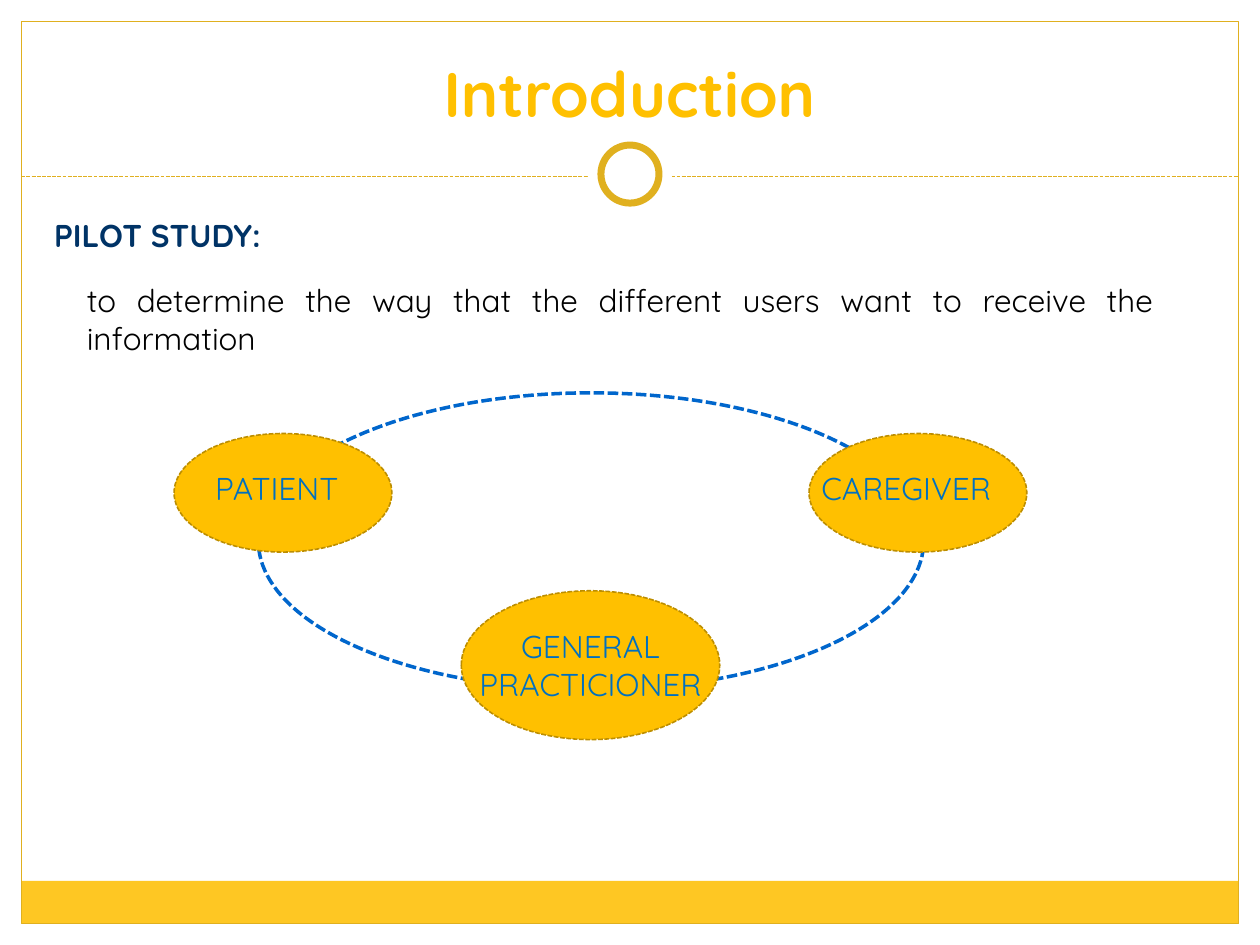
from lxml import etree
from pptx import Presentation
from pptx.dml.color import RGBColor
from pptx.enum.dml import MSO_LINE
from pptx.enum.shapes import MSO_CONNECTOR, MSO_SHAPE
from pptx.enum.text import MSO_ANCHOR, PP_ALIGN
from pptx.oxml.ns import qn
from pptx.util import Cm, Pt

OVAL, RECT = MSO_SHAPE.OVAL, MSO_SHAPE.RECTANGLE
LINE = MSO_CONNECTOR.STRAIGHT
DASH = MSO_LINE.SQUARE_DOT
LEFT, MID, JUST = PP_ALIGN.LEFT, PP_ALIGN.CENTER, PP_ALIGN.JUSTIFY
TOP, BASE = MSO_ANCHOR.TOP, MSO_ANCHOR.BOTTOM

WIDE, HIGH = 25.4, 19.05
GOLD, AMBER, WHITE = "E0B01F", "FFC000", "FFFFFF"


def tint(code):
    return RGBColor.from_string(code)


def stroke(line, code, size, dash=None):
    line.color.rgb = tint(code)
    line.width = Pt(size)
    if dash:
        line.dash_style = dash


def shape(slide, kind, box, fill=None, line=None):
    item = slide.shapes.add_shape(kind, *map(Cm, box))
    item.shadow.inherit = False
    if fill:
        item.fill.solid()
        item.fill.fore_color.rgb = tint(fill)
    else:
        item.fill.background()
    if line:
        stroke(item.line, *line)
    else:
        item.line.fill.background()
    return item


def write(frame, text, code, size=18, bold=False, align=LEFT, anchor=TOP):
    frame.word_wrap = True
    frame.vertical_anchor = anchor
    para = frame.paragraphs[0]
    para.alignment = align
    run = para.add_run()
    run.text = text
    form = {"name": "Quicksand", "size": Pt(size), "bold": bold}
    for key, value in form.items():
        setattr(run.font, key, value)
    run.font.color.rgb = tint(code)


def label(slide, box, text, code, **form):
    item = slide.shapes.add_textbox(*map(Cm, box))
    write(item.text_frame, text, code, **form)


def border(slide, box):
    left, top, wide, high = box
    mid = left + wide / 2
    # Footer band and frame
    shape(slide, RECT, (left, top + high - 0.86, wide, 0.86), "FEC723")
    shape(slide, RECT, box, line=(GOLD, 0.75))
    # Dashed rule under the title
    rule = top + 3.13
    ends = map(Cm, (left, rule, left + wide, rule))
    link = slide.shapes.add_connector(LINE, *ends)
    stroke(link.line, GOLD, 0.75, DASH)
    etree.SubElement(link._element.spPr, qn("a:effectLst"))
    # Ring on the rule, with a white gap around it
    for size, line in ((1.7, None), (1.17, (GOLD, 4))):
        spot = (mid - size / 2, rule - 0.05 - size / 2, size, size)
        shape(slide, OVAL, spot, WHITE, line)


def heading(slide, box):
    title = slide.shapes.title
    for key, value in zip(("left", "top", "width", "height"), box):
        setattr(title, key, Cm(value))
    write(title.text_frame, "Introduction", AMBER, size=36, bold=True,
          align=MID, anchor=BASE)


def study(slide, box):
    left, top, wide, high = box
    label(slide, (left, top, wide, 1.02), "PILOT STUDY:", "003366", bold=True)
    label(slide, (left + 0.66, top + 1.3, wide - 1.62, high - 1.3),
          "to determine the way that the different users want to receive "
          "the information", "000000", align=JUST)


def users(slide, box):
    left, top, wide, high = box
    # Loop that joins the users
    shape(slide, OVAL, (left + 1.7, top, 13.41, 5.99),
          line=("0066CC", 2, DASH))
    # Users: x, y, width, height, label inset, label height, name, alignment
    side, low = (4.39, 2.39), (5.21, 3)
    nodes = (
        (0, 0.82, *side, 0.58, 1.02, "PATIENT", LEFT),
        ((wide - low[0]) / 2 - 0.2, high - low[1], *low, 0, 1.8,
         "GENERAL PRACTICIONER", MID),
        (wide - side[0], 0.82, *side, 0, 1.02, "CAREGIVER", LEFT),
    )
    for x, y, w, h, inset, tall, name, align in nodes:
        x, y = left + x, top + y
        shape(slide, OVAL, (x, y, w, h), AMBER, ("BD8E00", 0.9, DASH))
        label(slide, (x + inset, y + 0.6, w - 2 * inset, tall),
              name, "0070C0", align=align)


def main():
    deck = Presentation()
    deck.slide_width, deck.slide_height = Cm(WIDE), Cm(HIGH)
    slide = deck.slides.add_slide(deck.slide_layouts[5])
    edge = 0.43
    border(slide, (edge, edge, WIDE - 2 * edge, HIGH - 2 * edge))
    heading(slide, (0.84, 0.64, 23.7, 2.11))
    study(slide, (0.84, 4.24, 23.62, 3.1))
    users(slide, (3.51, 7.92, 17.19, 6.99))
    deck.save("out.pptx")


if __name__ == "__main__":
    main()
